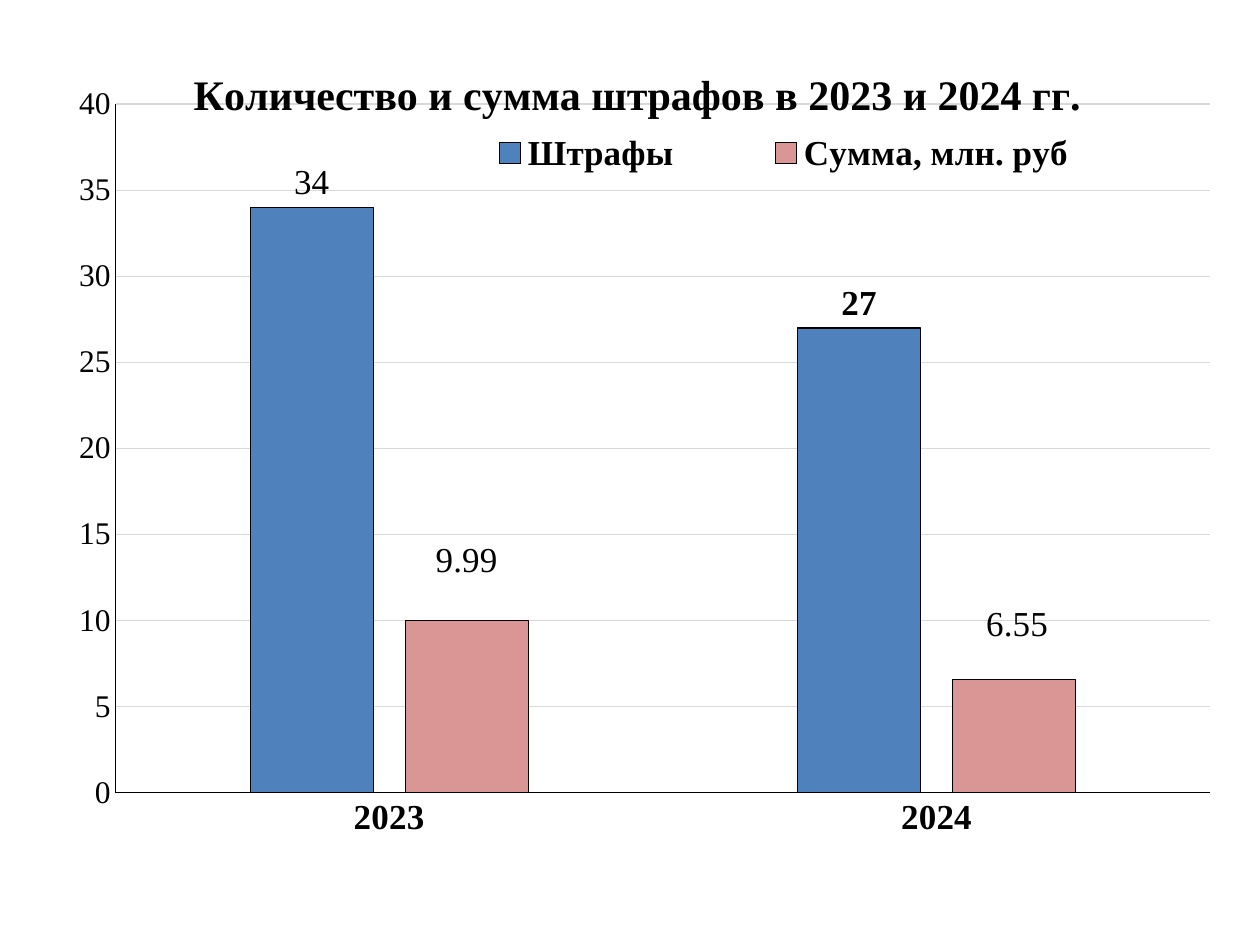
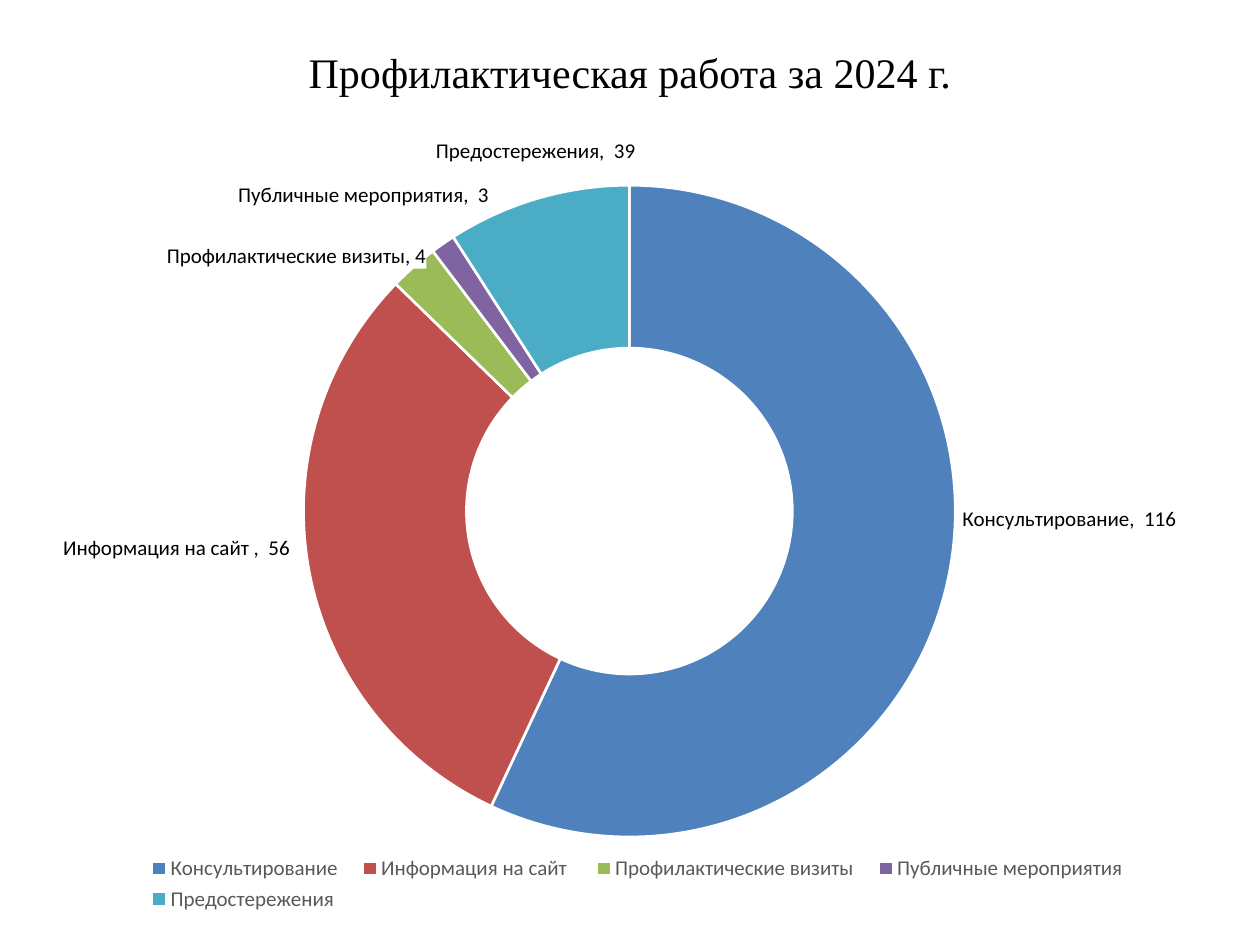
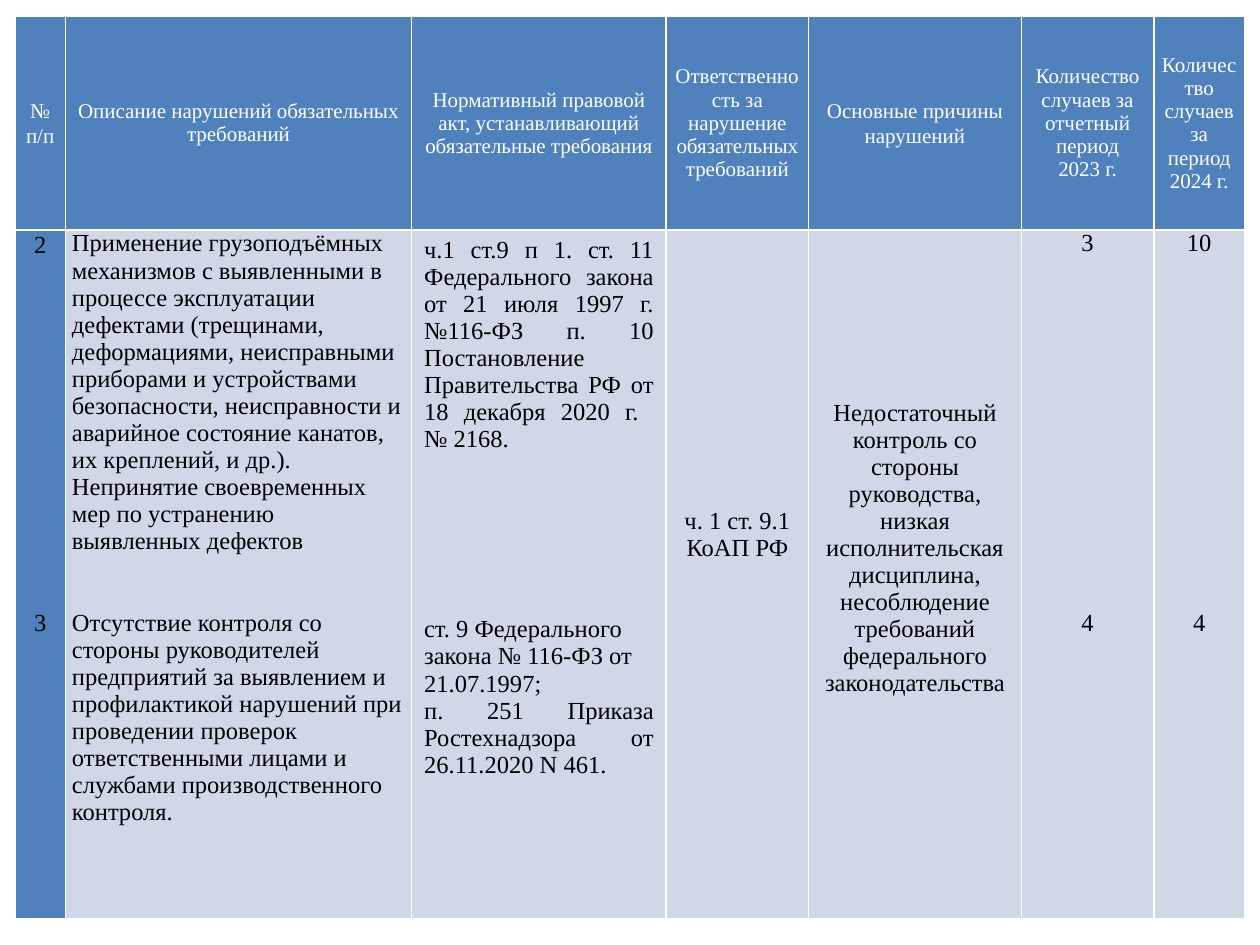
import dataclasses

import lxml.etree
import pptx
import pptx.chart.data
import pptx.dml.color
import pptx.enum.chart
import pptx.enum.text
import pptx.oxml.ns
import pptx.util

Cm = pptx.util.Cm
Pt = pptx.util.Pt
RGB = pptx.dml.color.RGBColor.from_string
qn = pptx.oxml.ns.qn
ALIGN = pptx.enum.text.PP_ALIGN
ANCHOR = pptx.enum.text.MSO_ANCHOR
XL = pptx.enum.chart


@dataclasses.dataclass(frozen=True)
class Theme:
    serif: str = "Times New Roman"
    sans: str = "Calibri"
    black: str = "000000"
    white: str = "FFFFFF"
    grey: str = "595959"
    grid: str = "D9D9D9"
    blue: str = "4F81BD"
    pink: str = "D99694"
    pale: str = "D0D8E8"
    slices: tuple = ("4F81BD", "C0504D", "9BBB59", "8064A2", "4BACC6")
    title: int = 24
    label: int = 20
    axis: int = 18
    body: int = 14
    small: int = 12


T = Theme()
BODY_LINE = 15.5  # height of one line of table text, in points


# Shared helpers
def style(obj, **values):
    for name, value in values.items():
        setattr(obj, name, value)


def set_font(font, size, color=T.black, name=T.serif, bold=False):
    style(font, size=Pt(size), name=name, bold=bold)
    font.color.rgb = RGB(color)


def set_fill(obj, color):
    obj.fill.solid()
    obj.fill.fore_color.rgb = RGB(color)


def set_line(line, color, width=0.75):
    line.width = Pt(width)
    line.color.rgb = RGB(color)


def place(el, box, after=None, edge=True, inner=False, **lengths):
    """Lay out a chart part; lengths in cm become shares of the chart box."""
    old = el.find(qn("c:layout"))
    if old is not None:
        el.remove(old)
    layout = lxml.etree.Element(qn("c:layout"))
    manual = lxml.etree.SubElement(layout, qn("c:manualLayout"))
    values = {"layoutTarget": "inner"} if inner else {}
    if edge:
        values.update(xMode="edge", yMode="edge")
    for key, length in lengths.items():
        values[key] = f"{length / (box[2] if key in 'xw' else box[3]):.4f}"
    for key, value in values.items():
        lxml.etree.SubElement(manual, qn("c:" + key), val=value)
    if after:
        el.find(qn(after)).addnext(layout)
    else:
        el.insert(0, layout)


def add_chart(s, box, kind, cats, series):
    data = pptx.chart.data.CategoryChartData()
    data.categories = cats
    for name, values in series:
        data.add_series(name, values)
    return s.shapes.add_chart(kind, *map(Cm, box), data).chart


def add_legend(chart, box, font, **lengths):
    chart.has_legend = True
    legend = chart.legend
    style(legend, position=XL.XL_LEGEND_POSITION.BOTTOM, include_in_layout=False)
    set_font(legend.font, **font)
    place(legend._element, box, after="c:legendPos", **lengths)


def label_series(ser, font, **shown):
    """Set the common labels of a series, without leader lines."""
    labels = ser.data_labels
    style(labels, show_value=True, **shown)
    set_font(labels.font, **font)
    el = labels._element
    lead = el.find(qn("c:showLeaderLines"))
    if lead is None:
        lead = lxml.etree.SubElement(el, qn("c:showLeaderLines"))
    lead.set("val", "0")
    return el


# Clustered columns with a title over the plot
def fines_chart(s, box):
    chart = add_chart(s, box, XL.XL_CHART_TYPE.COLUMN_CLUSTERED, ["2023", "2024"],
                      [("Штрафы", (34, 27)), ("Сумма, млн. руб", (9.99, 6.55))])
    set_font(chart.font, T.axis)
    plot = chart.plots[0]
    style(plot, gap_width=219, overlap=-26, vary_by_categories=False)
    place(chart._chartSpace.chart.plotArea, box, inner=True,
          x=1.24, y=1.36, w=22.07, h=13.88)

    # Title and legend
    title = chart.chart_title
    title.text_frame.text = "Количество и сумма штрафов в 2023 и 2024 гг."
    set_font(title.text_frame.paragraphs[0].runs[0].font, T.title, bold=True)
    place(title._element, box, after="c:tx", x=2.66, y=0.46)
    title._element.find(qn("c:overlay")).set("val", "1")
    add_legend(chart, box, dict(size=T.label, bold=True), x=7.16, y=1.75, w=15.1, h=1.2)

    # Axes
    val, cat = chart.value_axis, chart.category_axis
    style(val, minimum_scale=0, maximum_scale=40, major_unit=5)
    set_line(val.major_gridlines.format.line, T.grid)
    for axis, size, bold in ((val, T.axis, False), (cat, T.label, True)):
        style(axis, major_tick_mark=XL.XL_TICK_MARK.NONE,
              minor_tick_mark=XL.XL_TICK_MARK.NONE)
        set_font(axis.tick_labels.font, size, bold=bold)
        set_line(axis.format.line, T.black)

    # Columns and their labels: (bold, shift)
    marks = [[(False, None), (True, None)],
             [(False, (0, -0.72)), (False, (0.06, -0.62))]]
    for ser, color, row in zip(plot.series, (T.blue, T.pink), marks):
        set_fill(ser.format, color)
        set_line(ser.format.line, T.black)
        labels = label_series(ser, dict(size=T.label, bold=True))
        for i, (bold, shift) in enumerate(row):
            label = ser.points[i].data_label
            set_font(label.font, T.label, bold=bold)
            label.position = XL.XL_LABEL_POSITION.OUTSIDE_END
            if shift:
                place(labels.findall(qn("c:dLbl"))[i], box, after="c:idx", edge=False,
                      x=shift[0], y=shift[1])


def slide_title(s, box, text):
    tf = s.shapes.add_textbox(*map(Cm, box)).text_frame
    style(tf, word_wrap=True, vertical_anchor=ANCHOR.MIDDLE)
    p = tf.paragraphs[0]
    style(p, text=text, alignment=ALIGN.CENTER)
    set_font(p.runs[0].font, T.title)


# Doughnut with labels around the ring
def prevention_chart(s, box):
    # category, value, own label text, shift of the label from its slice
    slices = [
        ("Консультирование", 94, "Консультирование,  116", (4.06, -0.91)),
        ("Информация на сайт ", 50, "Информация на сайт ,  56", (-4.28, -0.14)),
        ("Профилактические визиты", 4, None, (-3.45, -1.45)),
        ("Публичные мероприятия", 2, "Публичные мероприятия,  3", (-2.54, -2.32)),
        ("Предостережения", 15, "Предостережения,  39", (-0.5, -2.52)),
    ]
    chart = add_chart(s, box, XL.XL_CHART_TYPE.DOUGHNUT, [row[0] for row in slices],
                      [("Series 1", [row[1] for row in slices])])
    chart.has_title = False
    set_font(chart.font, 10, name=T.sans)
    plot = chart.plots[0]
    plot.vary_by_categories = True
    place(chart._chartSpace.chart.plotArea, box, inner=True,
          x=5.03, y=1.6, w=13.14, h=13.15)
    add_legend(chart, box, dict(size=T.small, color=T.grey, name=T.sans),
               x=1.62, y=15.02, w=20.3, h=1.34)

    ser = plot.series[0]
    font = dict(size=T.small, name=T.sans)
    labels = label_series(ser, font, show_category_name=True)
    for i, (cat, value, text, (dx, dy)) in enumerate(slices):
        point = ser.points[i]
        set_fill(point.format, T.slices[i])
        set_line(point.format.line, T.white, 1.5)
        label = point.data_label
        if text:
            label.text_frame.text = text
            set_font(label.text_frame.paragraphs[0].runs[0].font, **font)
        else:
            set_font(label.font, **font)
        dlbl = labels.findall(qn("c:dLbl"))[i]
        dlbl.find(qn("c:showCatName")).set("val", "1")
        place(dlbl, box, after="c:idx", edge=False, x=dx, y=dy)
        if not text:  # white backing where the label meets the ring
            sp_pr = lxml.etree.Element(qn("c:spPr"))
            fill = lxml.etree.SubElement(sp_pr, qn("a:solidFill"))
            lxml.etree.SubElement(fill, qn("a:srgbClr"), val=T.white)
            old = dlbl.find(qn("c:spPr"))
            if old is not None:
                dlbl.remove(old)
            dlbl.find(qn("c:layout")).addnext(sp_pr)
            lxml.etree.SubElement(dlbl, qn("c:separator")).text = ", "


# Table of violations
def set_borders(cell):
    tc_pr = cell._tc.get_or_add_tcPr()
    for side in "LRTB":
        ln = lxml.etree.SubElement(tc_pr, qn("a:ln" + side), w=str(Pt(1)))
        fill = lxml.etree.SubElement(ln, qn("a:solidFill"))
        lxml.etree.SubElement(fill, qn("a:srgbClr"), val=T.white)


def fill_cell(cell, paras, size, color, fill, align=ALIGN.CENTER,
              spacing=None, anchor=ANCHOR.TOP, narrow=True, top=0):
    """Each paragraph is (text, blank height above in lines[, alignment])."""
    set_borders(cell)
    set_fill(cell, fill)
    side, edge = (0.13, 0) if narrow else (0.25, 0.13)
    style(cell, vertical_anchor=anchor, margin_left=Cm(side), margin_right=Cm(side),
          margin_top=Cm(edge) + Pt(top * BODY_LINE), margin_bottom=Cm(edge))
    tf = cell.text_frame
    for i, (text, gap, *own) in enumerate(paras):
        p = tf.add_paragraph() if i else tf.paragraphs[0]
        style(p, text=text, alignment=own[0] if own else align)
        if spacing:
            p.line_spacing = spacing
        if gap:
            p.space_before = Pt(gap * BODY_LINE * (spacing or 1))
        for r in p.runs:
            set_font(r.font, size, color)
        for br in p._p.findall(qn("a:br")):
            lxml.etree.SubElement(br, qn("a:rPr"), sz=str(size * 100))


def violations_table(s, box):
    heads = [
        ["№ п/п"],
        ["Описание нарушений обязательных требований"],
        ["Нормативный правовой акт, устанавливающий обязательные требования"],
        ["Ответственность за нарушение обязательных требований"],
        ["Основные причины нарушений"],
        ["Количество случаев за отчетный период", "2023 г."],
        ["Количество случаев за период 2024 г."],
    ]
    loose = {0: 1.07, 4: 1.07}
    body = [
        dict(paras=[("2", 0), ("3", 12)], fill=T.blue, spacing=1.07),
        dict(paras=[
            ("Применение грузоподъёмных механизмов с выявленными в процессе "
             "эксплуатации дефектами (трещинами, деформациями, неисправными "
             "приборами и устройствами безопасности, неисправности и аварийное "
             "состояние канатов, их креплений, и др.). Непринятие своевременных "
             "мер по устранению выявленных дефектов", 0),
            ("Отсутствие контроля со стороны руководителей предприятий за "
             "выявлением и профилактикой нарушений при проведении проверок "
             "ответственными лицами и службами производственного контроля.", 2),
        ], align=ALIGN.LEFT),
        dict(paras=[
            ("ч.1 ст.9 п 1. ст. 11 Федерального закона от 21 июля 1997 г. "
             "№116-ФЗ п. 10 Постановление Правительства РФ от 18 декабря "
             "2020 г. \v№ 2168.", 0),
            ("ст. 9 Федерального закона № 116-ФЗ от 21.07.1997;", 6, ALIGN.LEFT),
            ("п. 251 Приказа Ростехнадзора от 26.11.2020 N 461.", 0),
        ], align=ALIGN.JUSTIFY, narrow=False),
        dict(paras=[("ч. 1 ст. 9.1 КоАП РФ", 0)], narrow=False, top=10),
        dict(paras=[
            ("Недостаточный контроль со стороны руководства, низкая "
             "исполнительская дисциплина, несоблюдение требований федерального "
             "законодательства", 0),
        ], narrow=False, top=6),
        dict(paras=[("3", 0), ("4", 13)]),
        dict(paras=[("10", 0), ("4", 13)]),
    ]
    tbl = s.shapes.add_table(2, len(heads), *map(Cm, box)).table
    style(tbl, first_row=False, horz_banding=False)
    for col, width in zip(tbl.columns, (1.02, 6.98, 5.13, 2.87, 4.29, 2.67, 1.83)):
        col.width = Cm(width)
    head_height = 4.31
    for row, height in zip(tbl.rows, (head_height, box[3] - head_height)):
        row.height = Cm(height)
    for i, (head, content) in enumerate(zip(heads, body)):
        fill_cell(tbl.cell(0, i), [(text, 0) for text in head], T.small, T.white,
                  T.blue, spacing=loose.get(i), anchor=ANCHOR.MIDDLE)
        fill_cell(tbl.cell(1, i), size=T.body, color=T.black,
                  **{"fill": T.pale, **content})


def main():
    prs = pptx.Presentation()
    style(prs, slide_width=Cm(25.4), slide_height=Cm(19.05))
    blank = prs.slide_layouts[6]

    # Fines
    fines_chart(prs.slides.add_slide(blank), (1.09, 0.74, 23.52, 17.2))

    # Prevention
    s = prs.slides.add_slide(blank)
    slide_title(s, (1.27, 0.76, 22.86, 1.37), "Профилактическая работа за 2024 г.")
    prevention_chart(s, (1.09, 2.13, 22.86, 17.58))

    # Violations
    violations_table(prs.slides.add_slide(blank), (0.3, 0.33, 24.79, 18.2))

    prs.save("out.pptx")


if __name__ == "__main__":
    main()
